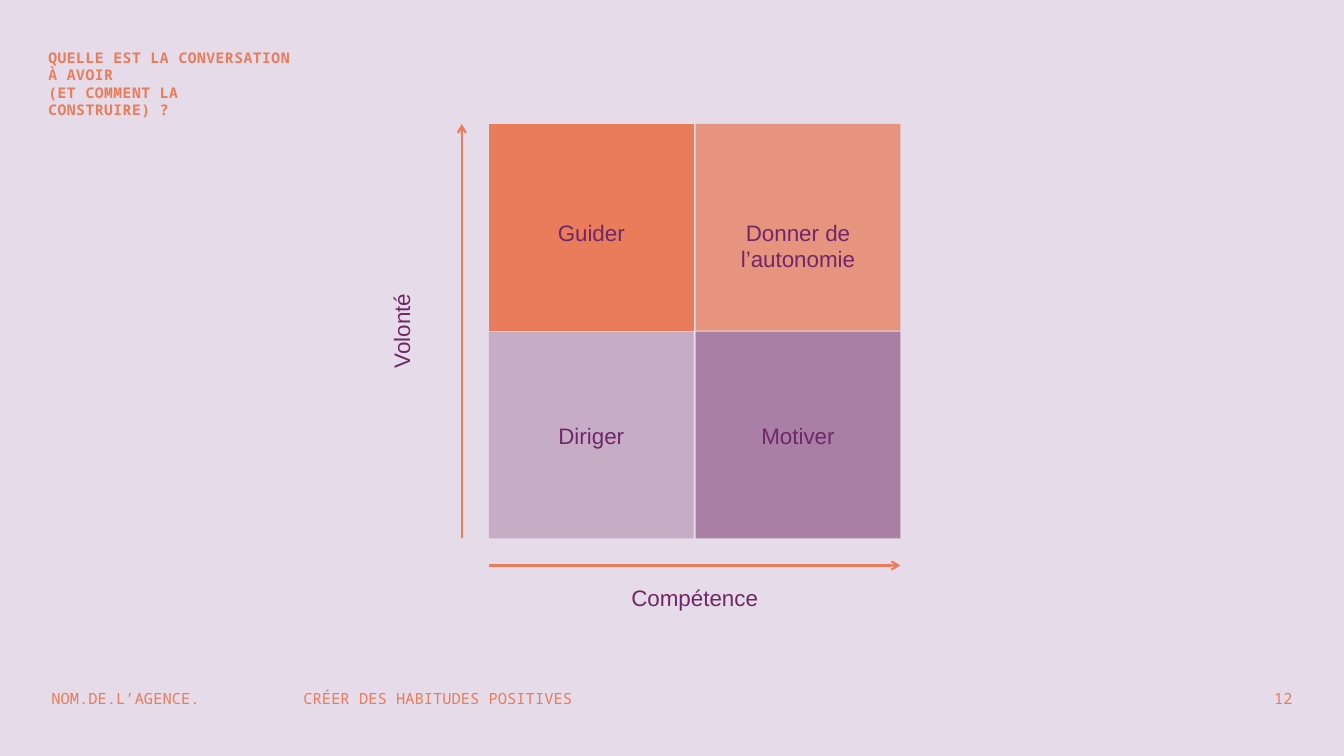
from dataclasses import dataclass
from itertools import product

from lxml.etree import SubElement
from pptx import Presentation
from pptx.dml.color import RGBColor as RGB
from pptx.enum.shapes import MSO_CONNECTOR as CONN, MSO_SHAPE as SHAPE
from pptx.enum.text import PP_ALIGN as ALIGN
from pptx.oxml.ns import qn
from pptx.util import Inches, Pt


@dataclass(frozen=True)
class Style:
    font: str
    size: float
    color: RGB
    bold: bool = False
    spacing: int = 0


@dataclass(frozen=True)
class Theme:
    back = RGB.from_string("E6DBE8")
    orange = RGB.from_string("E87C5B")
    plum = RGB.from_string("6F2768")
    title = Style("Noto Sans Mono", 10.5, orange, True, 40)
    footer = Style("Noto Sans Mono", 11, orange)
    label = Style("Arial", 16, plum)
    leading = 1
    line = 1.5


THEME = Theme()
WIDTH, HEIGHT = 13.33, 7.5
LEFT, TOP = 4.85, 1.23
CELL_W, CELL_H = 2.03, 2.05
STEP_X, STEP_Y = 2.05, 2.06
RIGHT, BOTTOM = LEFT + STEP_X + CELL_W, TOP + STEP_Y + CELL_H
AXIS_GAP = 0.27
LABEL_H = 0.41
FOOTER_Y, FOOTER_H = 6.84, 0.19

QUADRANTS = [
    ("Guider", THEME.orange, 100),
    ("Donner de l’autonomie", THEME.orange, 74),
    ("Diriger", THEME.plum, 26),
    ("Motiver", THEME.plum, 51),
]
FOOTERS = [
    (0.51, 2.12, "NOM.DE.L’AGENCE.", ALIGN.LEFT),
    (3.01, 3.35, "CRÉER DES HABITUDES POSITIVES", ALIGN.LEFT),
    (10.7, 2.12, "12", ALIGN.RIGHT),
]


def add_text(s, box, lines, style, align=ALIGN.CENTER, rotation=0):
    sp = s.shapes.add_textbox(*map(Inches, box))
    sp.rotation = rotation
    tf = sp.text_frame
    tf.word_wrap = True
    tf.margin_left = tf.margin_right = tf.margin_top = tf.margin_bottom = 0
    p = tf.paragraphs[0]
    p.alignment = align
    p.line_spacing = THEME.leading
    for i, line in enumerate(lines):
        if i:
            p.add_line_break()
        r = p.add_run()
        r.text = line
        r.font.name = style.font
        r.font.size = Pt(style.size)
        r.font.bold = style.bold
        r.font.color.rgb = style.color
        if style.spacing:
            r.font._element.set("spc", str(style.spacing))


def add_quadrant(s, x, y, color, opacity):
    box = map(Inches, (x, y, CELL_W, CELL_H))
    sp = s.shapes.add_shape(SHAPE.FLOWCHART_PROCESS, *box)
    sp.shadow.inherit = False
    sp.line.fill.background()
    sp.fill.solid()
    sp.fill.fore_color.rgb = color
    if opacity < 100:
        clr = sp._element.spPr.find(qn("a:solidFill"))[0]
        SubElement(clr, qn("a:alpha")).set("val", str(opacity * 1000))


def add_axis(s, *ends):
    c = s.shapes.add_connector(CONN.STRAIGHT, *map(Inches, ends))
    c.line.color.rgb = THEME.orange
    c.line.width = Pt(THEME.line)
    SubElement(c.line._get_or_add_ln(), qn("a:tailEnd")).set("type", "arrow")
    SubElement(c._element.spPr, qn("a:effectLst"))


def add_matrix(s):
    for (row, col), (name, color, opacity) in zip(product(range(2), repeat=2), QUADRANTS):
        x, y = LEFT + col * STEP_X, TOP + row * STEP_Y
        add_quadrant(s, x, y, color, opacity)
        label_y = y + (CELL_H - LABEL_H) / 2 + (0.12, 0.08)[row]
        add_text(s, (x, label_y, CELL_W, LABEL_H), [name], THEME.label)


def add_axes(s):
    x, y = LEFT - AXIS_GAP, BOTTOM + AXIS_GAP
    add_axis(s, x, BOTTOM, x, TOP)
    add_axis(s, LEFT, y, RIGHT, y)
    add_text(s, (2.86, 3.08, 2.38, LABEL_H), ["Volonté"], THEME.label, rotation=270)
    add_text(s, (LEFT, y + 0.18, RIGHT - LEFT, LABEL_H), ["Compétence"], THEME.label)


def main():
    prs = Presentation()
    prs.slide_width, prs.slide_height = Inches(WIDTH), Inches(HEIGHT)
    s = prs.slides.add_slide(prs.slide_layouts[6])
    s.background.fill.solid()
    s.background.fill.fore_color.rgb = THEME.back
    title = ["QUELLE EST LA CONVERSATION À AVOIR", "(ET COMMENT LA CONSTRUIRE) ?"]
    add_text(s, (0.48, 0.48, 2.52, 0.47), title, THEME.title, ALIGN.LEFT)
    add_matrix(s)
    add_axes(s)
    for x, w, text, align in FOOTERS:
        add_text(s, (x, FOOTER_Y, w, FOOTER_H), [text], THEME.footer, align)
    prs.save("out.pptx")


if __name__ == "__main__":
    main()
